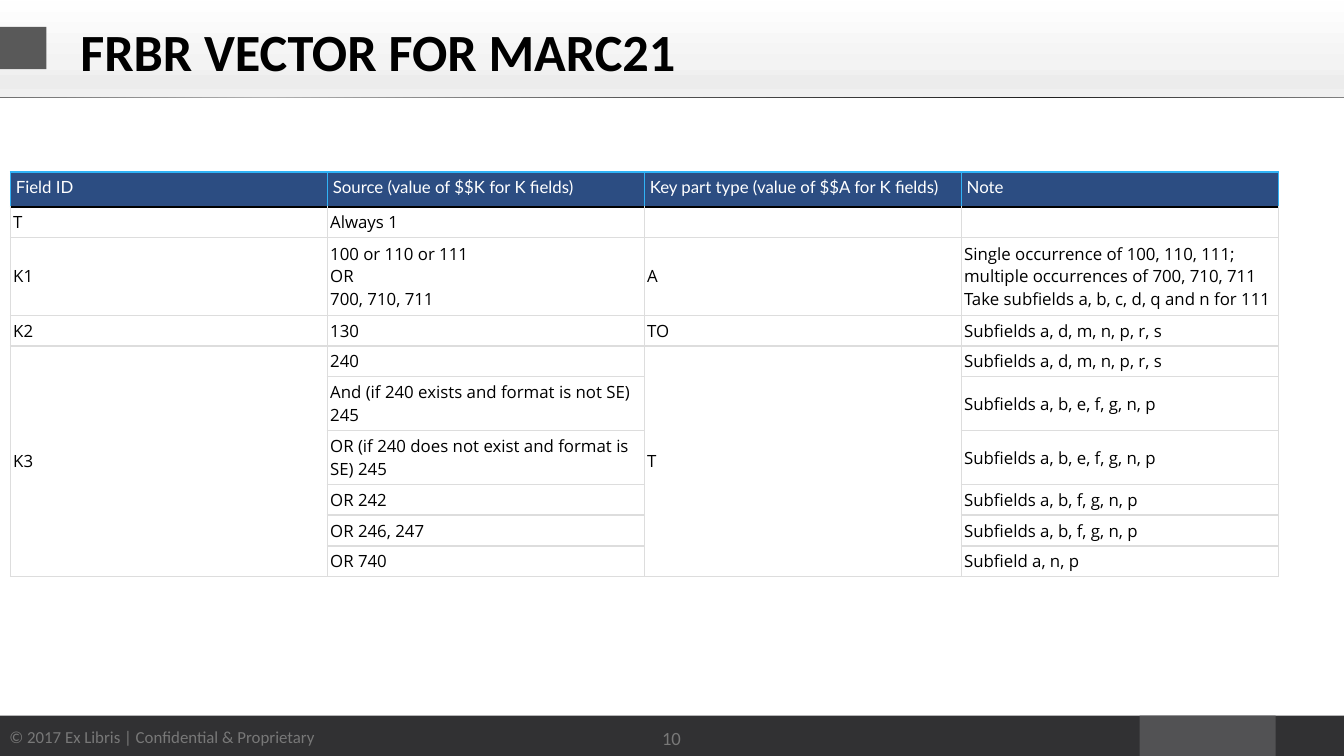
import pptx
import pptx.util
import pptx.dml.color
import pptx.enum.shapes
import pptx.enum.text
import pptx.oxml.ns
import lxml.etree

Cm = pptx.util.Cm
Pt = pptx.util.Pt
qn = pptx.oxml.ns.qn
ALIGN = pptx.enum.text.PP_ALIGN
ANCHOR = pptx.enum.text.MSO_ANCHOR

COLOURS = {
    "footer": "313133", "footer block": "525254", "footer text": "787878",
    "title block": "595959", "black": "000000", "white": "FFFFFF",
    "header row": "2C4D82", "header border": "30B3F6", "grid": "DDDDDD",
}
BAND_STOPS = [(0, "FEFEFE"), (66, "F3F3F3"), (83, "ECECEC"), (100, "F0F0F0")]
RULE_STOPS = [(0, "707070"), (20, "B0B0B0"), (50, "505050"),
              (78, "202020"), (100, "808080")]
TITLE = {"name": "Calibri", "size": Pt(28), "bold": True}
COPYRIGHT = {"name": "Calibri", "size": Pt(9)}
NUMBER = {"name": "Calibri", "size": Pt(10)}
HEADER = {"name": "Lato", "size": Pt(9)}
BODY = {"name": "Open Sans", "size": Pt(9)}

ROWS = [
    ["Field ID", "Source (value of $$K for K fields)",
     "Key part type (value of $$A for K fields)", "Note"],
    ["T", "Always 1", "", ""],
    ["K1", "100 or 110 or 111\nOR\n700, 710, 711", "A",
     "Single occurrence of 100, 110, 111; multiple occurrences of 700, 710, 711\n"
     "Take subfields a, b, c, d, q and n for 111"],
    ["K2", "130", "TO", "Subfields a, d, m, n, p, r, s"],
    ["K3", "240", "T", "Subfields a, d, m, n, p, r, s"],
    ["", "And (if 240 exists and format is not SE) 245", "",
     "Subfields a, b, e, f, g, n, p"],
    ["", "OR (if 240 does not exist and format is SE) 245", "",
     "Subfields a, b, e, f, g, n, p"],
    ["", "OR 242", "", "Subfields a, b, f, g, n, p"],
    ["", "OR 246, 247", "", "Subfields a, b, f, g, n, p"],
    ["", "OR 740", "", "Subfield a, n, p"],
]
HEIGHTS = [0.66, 0.58, 1.47, 0.58, 0.58, 1.02, 1.02, 0.58, 0.58, 0.58]
COLUMN_WIDTH = 5.99
MERGES = [(4, 0, 9, 0), (4, 2, 9, 2)]


def rgb(name):
    return pptx.dml.color.RGBColor.from_string(COLOURS[name])


class SlideBuilder:
    def __init__(self, slide):
        self.slide = slide

    def block(self, place, colour=None, stops=(), angle=0):
        shape = self.slide.shapes.add_shape(
            pptx.enum.shapes.MSO_SHAPE.RECTANGLE, *map(Cm, place))
        shape.shadow.inherit = False
        shape.line.fill.background()
        if colour:
            shape.fill.solid()
            shape.fill.fore_color.rgb = rgb(colour)
            return
        shape.fill.gradient()
        shape.fill.gradient_angle = angle
        stop_list = shape._element.spPr.find(".//" + qn("a:gsLst"))
        for old_stop in list(stop_list):
            stop_list.remove(old_stop)
        for position, value in stops:
            stop = lxml.etree.SubElement(stop_list, qn("a:gs"), pos=str(position * 1000))
            lxml.etree.SubElement(stop, qn("a:srgbClr"), val=value)

    def fill_text(self, frame, text, style, colour, align=ALIGN.LEFT):
        for index, line in enumerate(text.split("\n")):
            para = frame.add_paragraph() if index else frame.paragraphs[0]
            para.alignment = align
            if not line:
                # Keeps an empty cell as low as its row
                para._p.get_or_add_endParaRPr().set("sz", str(int(style["size"].pt * 100)))
                continue
            span = para.add_run()
            span.text = line
            for key, value in style.items():
                setattr(span.font, key, value)
            span.font.color.rgb = rgb(colour)

    def label(self, place, text, style, colour, align=ALIGN.LEFT,
              anchor=ANCHOR.MIDDLE, wrap=True):
        frame = self.slide.shapes.add_textbox(*map(Cm, place)).text_frame
        frame.word_wrap = wrap
        frame.vertical_anchor = anchor
        self.fill_text(frame, text, style, colour, align)

    def borders(self, cell, sides):
        properties = cell._tc.get_or_add_tcPr()
        for side, colour in sides.items():
            line = lxml.etree.SubElement(properties, qn("a:ln" + side), w=str(Pt(1)))
            fill = lxml.etree.SubElement(line, qn("a:solidFill"))
            lxml.etree.SubElement(fill, qn("a:srgbClr"), val=COLOURS[colour])

    def table(self, left, top):
        columns = len(ROWS[0])
        table = self.slide.shapes.add_table(
            len(ROWS), columns, Cm(left), Cm(top),
            Cm(COLUMN_WIDTH * columns), Cm(sum(HEIGHTS))).table
        table.first_row = table.horz_banding = False
        for column in table.columns:
            column.width = Cm(COLUMN_WIDTH)
        for index, (texts, height) in enumerate(zip(ROWS, HEIGHTS)):
            table.rows[index].height = Cm(height)
            for column, text in enumerate(texts):
                self.cell(table.cell(index, column), index, text)
        for top_row, first, bottom_row, last in MERGES:
            table.cell(top_row, first).merge(table.cell(bottom_row, last))

    def cell(self, cell, row, text):
        header = row == 0
        margin = Cm(0.1 if header else 0.05)
        layout = {"margin_left": margin, "margin_right": margin,
                  "margin_top": margin, "margin_bottom": margin,
                  "vertical_anchor": ANCHOR.TOP if header else ANCHOR.MIDDLE}
        for key, value in layout.items():
            setattr(cell, key, value)
        edge = "header border" if header else "grid"
        self.borders(cell, {"L": edge, "R": edge,
                            "T": "black" if row == 1 else edge,
                            "B": "black" if header else edge})
        cell.fill.solid()
        cell.fill.fore_color.rgb = rgb("header row" if header else "white")
        self.fill_text(cell.text_frame, text, HEADER if header else BODY,
                       "white" if header else "black")


def main():
    deck = pptx.Presentation()
    deck.slide_width, deck.slide_height = Cm(25.4), Cm(14.29)
    page = SlideBuilder(deck.slides.add_slide(deck.slide_layouts[6]))

    # Footer
    page.block((0, 13.53, 25.4, 0.8), "footer")
    page.label((-0.1, 13.62, 6.32, 0.64), "© 2017 Ex Libris | Confidential & Proprietary",
               COPYRIGHT, "footer text", ALIGN.CENTER, ANCHOR.TOP, wrap=False)
    page.block((21.54, 13.53, 2.57, 0.8), "footer block")
    page.label((11.94, 13.45, 1.5, 1.02), "10", NUMBER, "footer text", ALIGN.CENTER)

    # Title band
    page.block((0, 0.02, 25.4, 1.82), stops=BAND_STOPS, angle=270)
    page.block((0, 0.51, 0.88, 0.8), "title block")
    page.block((0, 1.83, 25.4, 0.02), stops=RULE_STOPS)
    page.label((1.27, 0.15, 22.86, 1.6), "FRBR VECTOR FOR MARC21", TITLE, "black")

    # Field table
    page.table(0.2, 3.25)
    deck.save("out.pptx")


if __name__ == "__main__":
    main()
